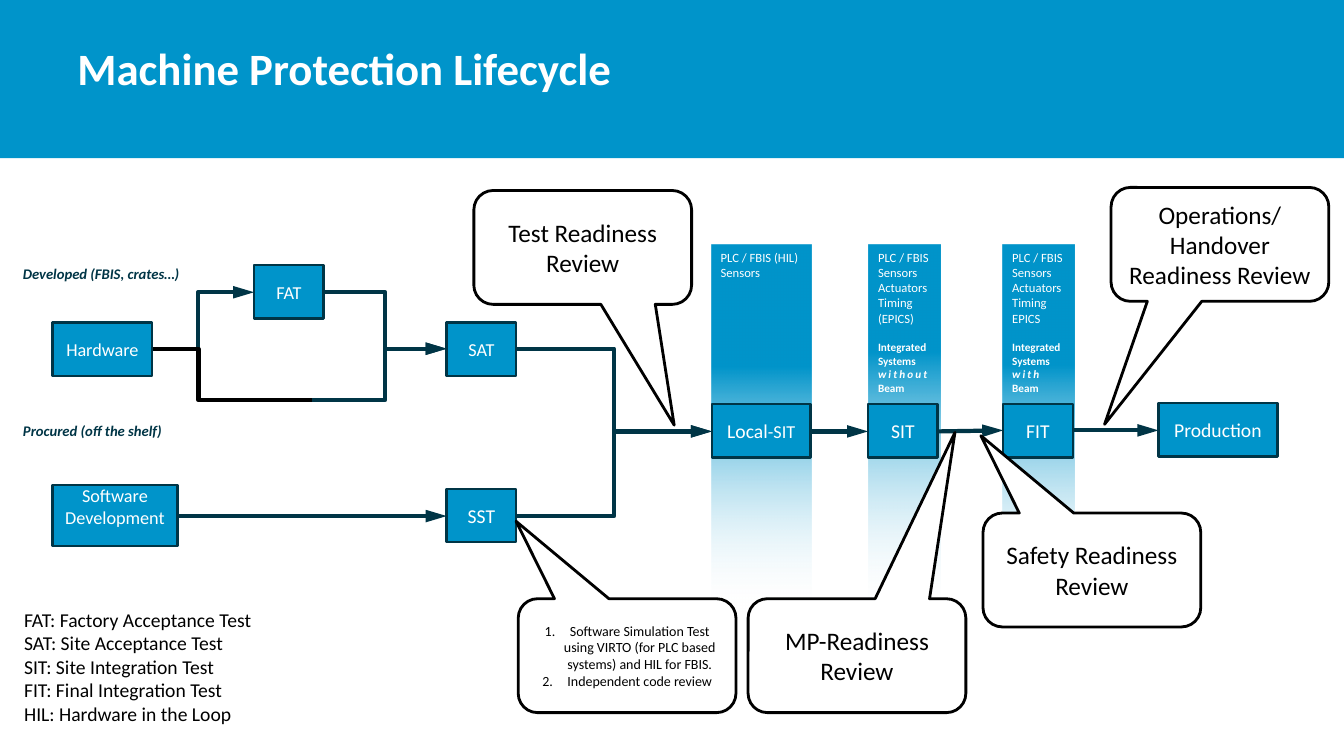
from lxml.etree import SubElement
from pptx import Presentation
from pptx.dml.color import RGBColor
from pptx.enum.shapes import MSO_CONNECTOR as CONN, MSO_SHAPE as SHAPE
from pptx.enum.text import MSO_ANCHOR as ANCHOR, PP_ALIGN as ALIGN
from pptx.oxml.ns import qn
from pptx.util import Inches, Pt

COLORS = {"blue": "0094CA", "navy": "003546", "white": "FFFFFF", "black": "000000"}
FONT = "Calibri"


def rgb(name):
    return RGBColor.from_string(COLORS[name])


def add_run(p, text, size, color, bold=False, italic=False, spacing=0):
    r = p.add_run()
    r.text = text
    r.font.name = FONT
    r.font.size = Pt(size)
    r.font.bold = bold
    r.font.italic = italic
    r.font.color.rgb = rgb(color)
    if spacing:
        r.font._element.set("spc", str(int(spacing * 100)))


def add_paragraphs(tf, lines, size, color, align=ALIGN.LEFT, numbered=False, **style):
    base = {"size": size, "color": color, **style}
    for i, line in enumerate(lines):
        p = tf.paragraphs[0] if i == 0 else tf.add_paragraph()
        p.alignment = align
        if numbered:
            pPr = p._p.get_or_add_pPr()
            pPr.set("marL", str(Inches(0.25)))
            pPr.set("indent", str(Inches(-0.25)))
            SubElement(pPr, qn("a:buFont"), typeface="+mj-lt")
            SubElement(pPr, qn("a:buAutoNum"), type="arabicPeriod")
        runs = [(line, {})] if isinstance(line, str) else line
        for text, extra in runs:
            add_run(p, text, **{**base, **extra})


def add_shape(s, kind, x, y, w, h, fill, line=None, weight=1.75):
    sp = s.shapes.add_shape(kind, Inches(x), Inches(y), Inches(w), Inches(h))
    sp.shadow.inherit = False
    sp.fill.solid()
    sp.fill.fore_color.rgb = rgb(fill)
    if line:
        sp.line.color.rgb = rgb(line)
        sp.line.width = Pt(weight)
    else:
        sp.line.fill.background()
    tf = sp.text_frame
    tf.word_wrap = True
    tf.vertical_anchor = ANCHOR.MIDDLE
    return sp


def add_text(s, x, y, w, h, lines, size, color, anchor=ANCHOR.TOP, wrap=True, **style):
    tf = s.shapes.add_textbox(Inches(x), Inches(y), Inches(w), Inches(h)).text_frame
    tf.word_wrap = wrap
    tf.vertical_anchor = anchor
    add_paragraphs(tf, lines, size, color, **style)


def add_step(s, x, y, w, lines, size=14, h=0.53, bottom=0.05):
    sp = add_shape(s, SHAPE.RECTANGLE, x, y, w, h, "blue", "navy")
    sp.text_frame.margin_bottom = Inches(bottom)
    add_paragraphs(sp.text_frame, lines, size, "white", ALIGN.CENTER)


def add_band(s, x, y, w, h, solid_from):
    sp = add_shape(s, SHAPE.RECTANGLE, x, y, w, h, "white")
    sp.rotation = 90
    sp.fill.gradient()
    sp.fill.gradient_angle = 180
    clear, solid = sp.fill.gradient_stops
    clear.position, solid.position = 0, solid_from
    clear.color.rgb, solid.color.rgb = rgb("white"), rgb("blue")
    SubElement(next(sp._element.iter(qn("a:srgbClr"))), qn("a:alpha"), val="0")


def add_flow(s, start, end, bend=None, color="navy", arrow=True):
    kind = CONN.STRAIGHT if bend is None else CONN.ELBOW
    c = s.shapes.add_connector(kind, *(Inches(v) for v in start + end))
    c.line.color.rgb = rgb(color)
    c.line.width = Pt(3)
    spPr = c._element.spPr
    if arrow:
        SubElement(spPr.find(qn("a:ln")), qn("a:tailEnd"), type="triangle", len="lg")
    SubElement(spPr, qn("a:effectLst"))
    if bend is not None:
        guides = spPr.find(qn("a:prstGeom")).get_or_add_avLst()
        SubElement(guides, qn("a:gd"), name="adj1", fmla=f"val {int(bend * 100000)}")


def add_callout(s, x, y, tip, lines, size=18, numbered=False):
    sp = add_shape(s, SHAPE.ROUNDED_RECTANGULAR_CALLOUT, x, y, 2.16, 1.13,
                   "white", "black", 2)
    sp.adjustments[0], sp.adjustments[1] = tip
    sp.adjustments[2] = 0.17
    add_paragraphs(sp.text_frame, lines, size, "black", ALIGN.CENTER, numbered)


def main():
    prs = Presentation()
    prs.slide_width, prs.slide_height = Inches(13.33), Inches(7.5)
    s = prs.slides.add_slide(prs.slide_layouts[6])

    add_shape(s, SHAPE.RECTANGLE, 0, 0, 13.33, 1.57, "blue")
    add_text(s, 0.67, 0.38, 10.41, 0.61, ["Machine Protection Lifecycle"], 32, "white",
             ANCHOR.BOTTOM, bold=True)

    for band in [(8.5, 3.87, 3.6, 0.71, 0.67), (7.15, 3.89, 3.64, 0.71, 0.71),
                 (5.73, 3.75, 3.64, 0.99, 0.67)]:
        add_band(s, *band)

    for start, end in [((1.76, 5.12), (4.43, 5.12)), ((8.03, 4.28), (8.61, 4.28)),
                       ((9.3, 4.28), (9.95, 4.27)), ((10.64, 4.27), (11.49, 4.27))]:
        add_flow(s, start, end)
    for start, end, bend in [((3.21, 2.9), (4.43, 3.46), 0.5),
                             ((3.04, 3.97), (4.43, 3.46), 0.56),
                             ((1.51, 3.46), (2.52, 2.9), 0.45),
                             ((5.12, 3.46), (7.06, 4.28), 0.5),
                             ((5.12, 5.12), (7.06, 4.28), 0.5)]:
        add_flow(s, start, end, bend)
    add_flow(s, (1.51, 3.46), (3.09, 3.97), 0.29, "black", arrow=False)

    add_step(s, 0.52, 3.2, 0.99, ["Hardware"], 13)
    add_step(s, 0.52, 4.81, 1.24, ["Software", "Development"], 13, 0.61, 0.23)
    add_step(s, 2.52, 2.63, 0.69, ["FAT"], 13)
    add_step(s, 4.43, 3.2, 0.69, ["SAT"], 13)
    add_step(s, 4.43, 4.85, 0.69, ["SST"])
    add_step(s, 7.06, 4.01, 0.98, [[("Local", {}), ("-SIT", {"size": 13})]])
    add_step(s, 8.61, 4.01, 0.69, ["SIT"])
    add_step(s, 9.95, 4.01, 0.69, ["FIT"])
    add_step(s, 11.49, 4, 1.18, ["Production"])

    for y, w, label in [(2.57, 2.66, "Developed (FBIS, crates…)"),
                        (4.13, 2.26, "Procured (off the shelf)")]:
        add_text(s, 0.13, y, w, 0.28, [label], 10.5, "navy", ANCHOR.MIDDLE,
                 bold=True, italic=True)

    systems = ["PLC / FBIS", "Sensors", "Actuators", "Timing"]
    spaced = {"italic": True, "spacing": 1.5}
    add_text(s, 7.05, 2.43, 1, 1.03, ["PLC / FBIS (HIL)", "Sensors"], 9, "white")
    add_text(s, 8.61, 2.43, 0.71, 1.06, systems + ["(EPICS)"], 9, "white")
    add_text(s, 9.94, 2.43, 0.71, 1.02, systems + ["EPICS"], 9, "white")
    add_text(s, 8.61, 3.33, 0.71, 0.64,
             [[("Integrated Systems ", {}), ("without", spaced), (" Beam", {})]],
             8, "white", bold=True)
    add_text(s, 9.94, 3.33, 0.71, 0.64,
             ["Integrated Systems", [("with", spaced)], "Beam"], 8, "white", bold=True)

    add_callout(s, 9.75, 5.09, (-0.51, -1.18), ["Safety Readiness Review"])
    add_callout(s, 11.02, 1.86, (-0.53, 1.58), ["Operations/ Handover Readiness Review"])
    add_callout(s, 5.14, 5.94, (-0.51, -1.18),
                ["Software Simulation Test using VIRTO (for PLC based systems) and HIL for FBIS.",
                 "Independent code review"], 10, numbered=True)
    add_callout(s, 7.42, 5.94, (0.45, -1.96), ["MP-Readiness Review"])
    add_callout(s, 4.7, 1.89, (0.42, 1.56), ["Test Readiness Review"])

    add_text(s, 0.14, 5.98, 2.48, 1.28,
             ["FAT: Factory Acceptance Test", "SAT: Site Acceptance Test",
              "SIT: Site Integration Test", "FIT: Final Integration Test",
              "HIL: Hardware in the Loop"], 14, "black", wrap=False)

    prs.save("out.pptx")


if __name__ == "__main__":
    main()
